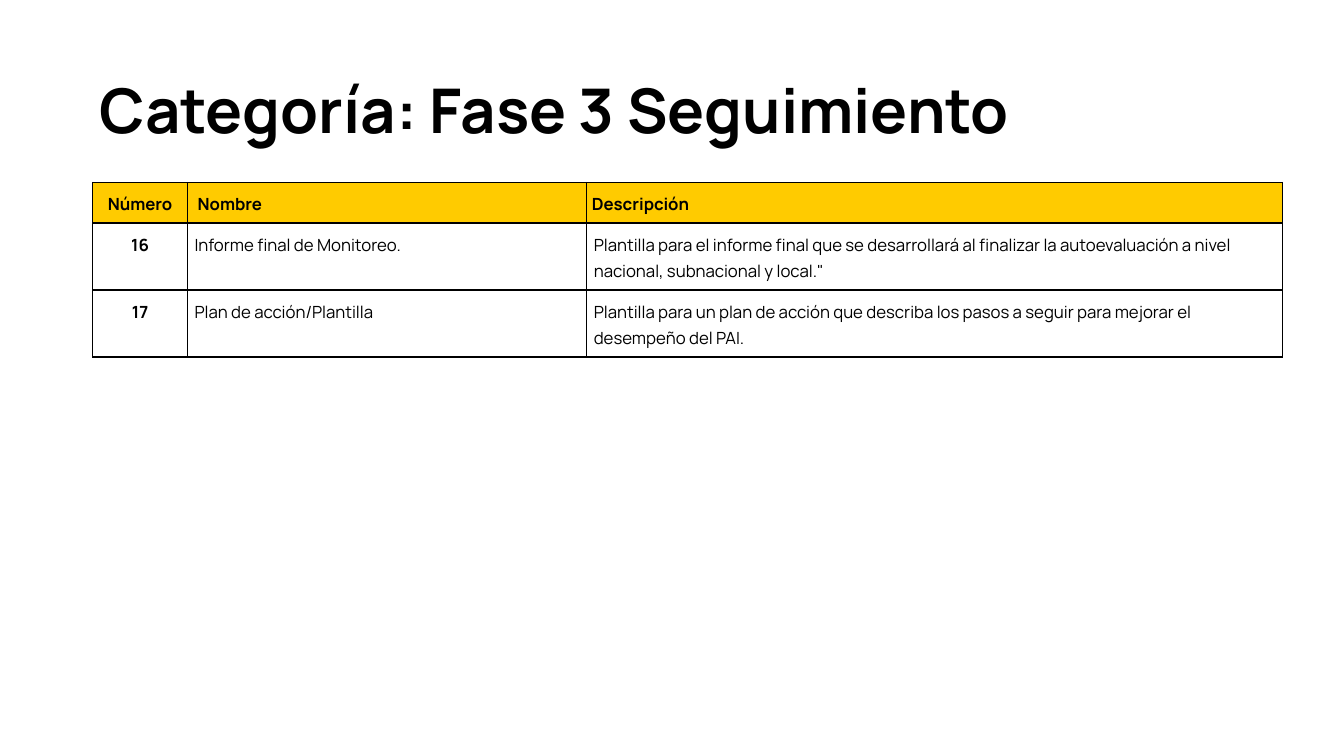
from pptx import Presentation
from pptx.dml.color import RGBColor
from pptx.enum import text
from pptx.oxml import parse_xml
from pptx.oxml.ns import nsdecls
from pptx.util import Inches, Pt

TITLE = "Categoría: Fase 3 Seguimiento"
HEADER = ("Número", "Nombre", "Descripción")
TEMPLATES = [
    ("16", "Informe final de Monitoreo.",
     "Plantilla para el informe final que se desarrollará al finalizar "
     "la autoevaluación a nivel nacional, subnacional y local.\""),
    ("17", "Plan de acción/Plantilla",
     "Plantilla para un plan de acción que describa los pasos a seguir "
     "para mejorar el desempeño del PAI."),
]
COLUMN_WIDTHS = (0.94, 3.96, 6.9)
ROW_HEIGHTS = (0.4, 0.66, 0.66)
HEADER_INSETS = ((0.07, 0.07), (0.1, 0.05), (0.05, 0.05))
BODY_INSETS = (0.07, 0.07)
BLACK, WHITE, YELLOW = "000000", "FFFFFF", "FFCB00"
LEFT, TABLE_TOP = 0.92, 1.81


def color(value):
    return RGBColor.from_string(value)


def write(frame, content, size=12, bold=False, align=text.PP_ALIGN.LEFT, spacing=1.15):
    paragraph = frame.paragraphs[0]
    paragraph.alignment = align
    paragraph.line_spacing = spacing
    run = paragraph.add_run()
    run.text = content
    run.font.name = "Manrope"
    run.font.size = Pt(size)
    run.font.bold = bold
    run.font.color.rgb = color(BLACK)


def set_insets(target, horizontal, vertical):
    target.margin_left = target.margin_right = Inches(horizontal)
    target.margin_top = target.margin_bottom = Inches(vertical)


def add_borders(cell):
    properties = cell._tc.get_or_add_tcPr()
    for position, side in enumerate(("lnL", "lnR", "lnT", "lnB")):
        properties.insert(position, parse_xml(
            f'<a:{side} {nsdecls("a")} w="{Pt(1)}"><a:solidFill>'
            f'<a:srgbClr val="{BLACK}"/></a:solidFill></a:{side}>'))


def add_title(slide):
    title = slide.shapes.title
    title.left, title.top = Inches(LEFT), Inches(0.4)
    title.width, title.height = Inches(12.01), Inches(1.45)
    frame = title.text_frame
    frame.word_wrap = True
    frame.auto_size = text.MSO_AUTO_SIZE.NONE
    frame.vertical_anchor = text.MSO_ANCHOR.MIDDLE
    set_insets(frame, 0.07, 0.04)
    write(frame, TITLE, size=44, bold=True, spacing=0.9)


def add_templates(slide):
    rows = [HEADER, *TEMPLATES]
    table = slide.shapes.add_table(
        len(rows), len(HEADER), Inches(LEFT), Inches(TABLE_TOP),
        Inches(sum(COLUMN_WIDTHS)), Inches(sum(ROW_HEIGHTS))).table
    table.horz_banding = False
    for column, width in zip(table.columns, COLUMN_WIDTHS):
        column.width = Inches(width)
    for r, (entries, height) in enumerate(zip(rows, ROW_HEIGHTS)):
        table.rows[r].height = Inches(height)
        is_header = r == 0
        for c, entry in enumerate(entries):
            cell = table.cell(r, c)
            cell.fill.solid()
            cell.fill.fore_color.rgb = color(YELLOW if is_header else WHITE)
            cell.vertical_anchor = text.MSO_ANCHOR.MIDDLE if is_header else text.MSO_ANCHOR.TOP
            set_insets(cell, *(HEADER_INSETS[c] if is_header else BODY_INSETS))
            add_borders(cell)
            write(cell.text_frame, entry, bold=is_header or c == 0,
                  align=text.PP_ALIGN.CENTER if c == 0 else text.PP_ALIGN.LEFT)


def main():
    deck = Presentation()
    deck.slide_width, deck.slide_height = Inches(13.33), Inches(7.5)
    slide = deck.slides.add_slide(deck.slide_layouts[5])
    slide.background.fill.solid()
    slide.background.fill.fore_color.rgb = color(WHITE)
    add_title(slide)
    add_templates(slide)
    deck.save("out.pptx")


if __name__ == "__main__":
    main()
